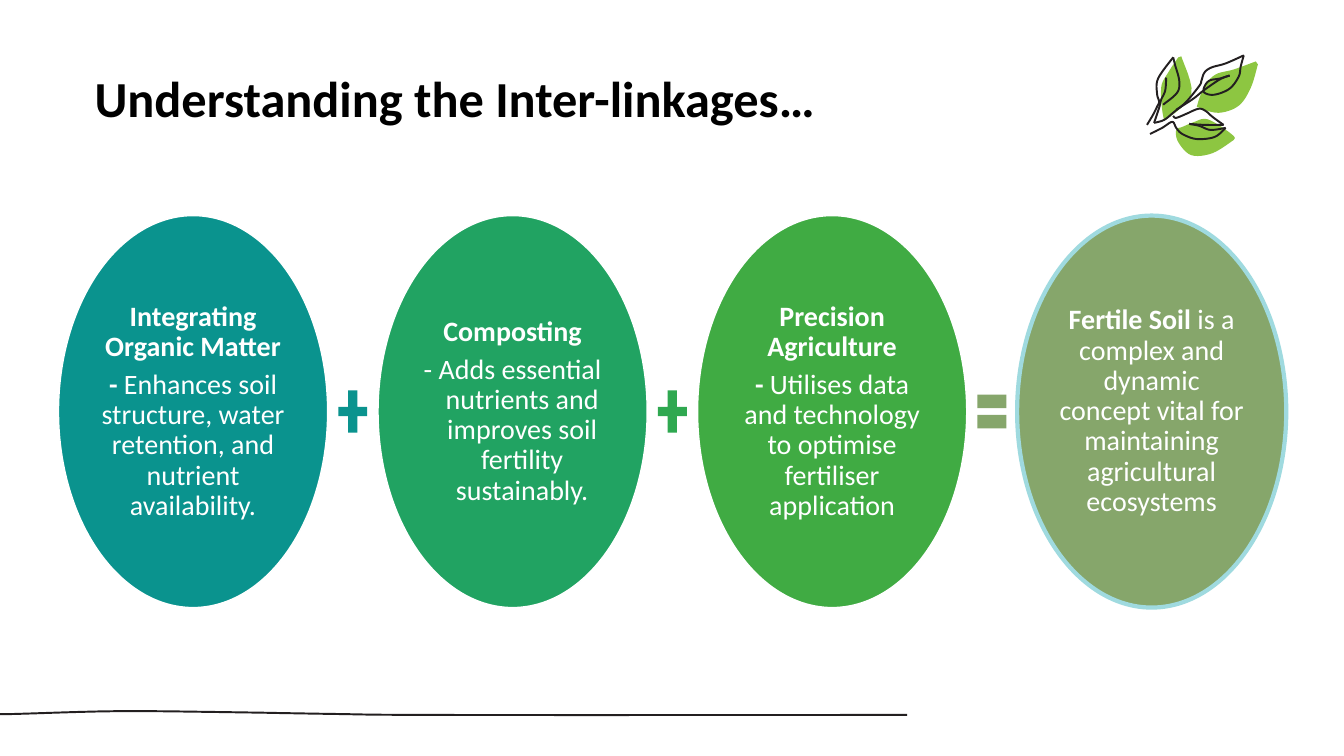
from pptx import Presentation, util as u
from pptx.dml.color import RGBColor
from pptx.enum import shapes, text

Pt = u.Pt
WHITE = RGBColor(0xFF, 0xFF, 0xFF)
BLACK = RGBColor(0, 0, 0)
INK = RGBColor(0x23, 0x1F, 0x20)
LEAF_GREEN = RGBColor(0x8D, 0xC6, 0x41)
TEAL = RGBColor(0x0A, 0x93, 0x8E)
EMERALD = RGBColor(0x21, 0xA3, 0x62)
MID_GREEN = RGBColor(0x2F, 0xA8, 0x50)
GREEN = RGBColor(0x40, 0xAB, 0x43)
OLIVE = RGBColor(0x86, 0xA6, 0x6B)
PALE_BLUE = RGBColor(0x9F, 0xDA, 0xDF)

FONT = "Calibri"
PLUS, EQUAL = shapes.MSO_SHAPE.MATH_PLUS, shapes.MSO_SHAPE.MATH_EQUAL
HANGING = Pt(13.7)

# Each paragraph is a list of (wording, bold) runs.
FACTORS = [
    (TEAL, WHITE, 1, [[("Integrating Organic Matter", True)],
                      [("- ", True), ("Enhances soil structure, water retention, "
                                      "and nutrient availability.", False)]]),
    (EMERALD, WHITE, 1, [[("Composting", True)],
                         [("- Adds essential nutrients and improves soil "
                           "fertility sustainably.", False)]]),
    (GREEN, WHITE, 1, [[("Precision Agriculture", True)],
                       [("-", True), (" Utilises data and technology to optimise "
                                      "fertiliser application", False)]]),
    (OLIVE, PALE_BLUE, 3, [[("Fertile Soil ", True),
                            ("is a complex and dynamic concept vital for "
                             "maintaining agricultural ecosystems", False)]]),
]
OPERATORS = [(PLUS, TEAL, [0.235]), (PLUS, MID_GREEN, [0.235]),
             (EQUAL, OLIVE, [0.235, 0.118])]

# Sprig points lie on a grid 100 units wide.
LEAVES = [
    [(35, 4), (45, 41), (22, 65), (17, 63), (15, 35), (22, 20), (32, 5)],
    [(111, 12), (104, 35), (92, 53), (72, 60), (53, 55), (51, 52), (58, 34),
     (69, 22), (87, 17), (109, 9)],
    [(87, 87), (87, 83), (72, 72), (59, 66), (48, 69), (36, 74), (30, 77),
     (32, 89), (45, 102), (66, 100), (87, 87)],
]
STEMS = [
    [(1, 72), (7, 62), (11, 54), (13, 49), (11, 41), (12, 26), (27, 5)],
    [(27, 5), (29, 13), (33, 28), (31, 40), (17, 52)],
    [(20, 25), (19, 38), (15, 47), (13, 55), (8, 70)],
    [(8, 70), (18, 67), (28, 59), (40, 49), (53, 33), (55, 28), (58, 20),
     (65, 15), (79, 11), (97, 3)],
    [(97, 3), (94, 14), (92, 24), (83, 36), (68, 42), (58, 40), (58, 34),
     (63, 28), (73, 26), (83, 23)],
    [(83, 23), (73, 27), (57, 38), (47, 46), (30, 57)],
    [(4, 81), (16, 75), (26, 69), (30, 75), (36, 81), (50, 86), (68, 84), (79, 75)],
    [(79, 75), (64, 77), (53, 73), (43, 71)],
    [(43, 71), (59, 72), (77, 72)],
    [(77, 72), (66, 64), (59, 58), (52, 56), (40, 61), (30, 65), (27, 63)],
]


def smooth(knots, steps=6):
    """Return points on a Catmull-Rom curve through the knots."""
    padded = [knots[0], *knots, knots[-1]]
    curve = [knots[0]]
    for a, b, c, d in zip(padded, padded[1:], padded[2:], padded[3:]):
        for step in range(1, steps + 1):
            t = step / steps
            curve.append(tuple(
                (2 * q + (r - p) * t + (2 * p - 5 * q + 4 * r - s) * t ** 2
                 + (3 * q - p - 3 * r + s) * t ** 3) / 2
                for p, q, r, s in zip(a, b, c, d)))
    return curve


def add_curve(slide, knots, left, top, unit, fill=None, line_width=1.4):
    """Draw a filled closed outline, or an open ink stroke when fill is None."""
    points = [(Pt(left + x * unit), Pt(top + y * unit)) for x, y in smooth(knots)]
    builder = slide.shapes.build_freeform(*points[0])
    builder.add_line_segments(points[1:], close=fill is not None)
    curve = builder.convert_to_shape()
    curve.shadow.inherit = False
    if fill is None:
        curve.fill.background()
        curve.line.color.rgb = INK
        curve.line.width = Pt(line_width)
    else:
        paint(curve, fill)


def paint(shape, fill):
    shape.shadow.inherit = False
    shape.fill.solid()
    shape.fill.fore_color.rgb = fill
    shape.line.fill.background()


def add_footer_rule(slide, left, top, width):
    wave = [(0, 2), (0.016, 2), (0.13, 0), (0.25, 0.7), (0.37, 2), (0.49, 2.7), (1, 2.7)]
    add_curve(slide, [(x * width, y) for x, y in wave], left, top, 1)


def add_title(slide, left, top, width, height):
    title = slide.shapes.add_textbox(Pt(left), Pt(top), Pt(width), Pt(height))
    frame = title.text_frame
    frame.word_wrap = True
    frame.auto_size = text.MSO_AUTO_SIZE.SHAPE_TO_FIT_TEXT
    frame.text = "Understanding the Inter-linkages…"
    font = frame.paragraphs[0].runs[0].font
    font.name, font.size, font.bold = FONT, Pt(36), True
    font.color.rgb = BLACK


def add_sprig(slide, left, top, width):
    unit = width / 100
    for leaf in LEAVES:
        add_curve(slide, leaf, left, top, unit, LEAF_GREEN)
    for stem in STEMS:
        add_curve(slide, stem, left, top, unit)


def add_factor(slide, left, top, width, height, factor):
    fill, outline, line_width, paragraphs = factor
    oval = slide.shapes.add_shape(shapes.MSO_SHAPE.OVAL, Pt(left), Pt(top),
                                  Pt(width), Pt(height))
    paint(oval, fill)
    oval.line.color.rgb = outline
    oval.line.width = Pt(line_width)
    frame = oval.text_frame
    frame.word_wrap = True
    frame.vertical_anchor = text.MSO_ANCHOR.MIDDLE
    frame.margin_left = frame.margin_right = Pt(1.44)
    frame.margin_top = frame.margin_bottom = Pt(1.44)
    for index, wording in enumerate(paragraphs):
        paragraph = frame.add_paragraph() if index else frame.paragraphs[0]
        paragraph.alignment = text.PP_ALIGN.CENTER
        paragraph.line_spacing = 0.9
        if index:
            paragraph.space_before = Pt(5.6)
            if len(wording) == 1:
                paragraph.level = 1
                properties = paragraph._p.get_or_add_pPr()
                properties.set("marL", str(HANGING))
                properties.set("indent", str(-HANGING))
        for words, bold in wording:
            run = paragraph.add_run()
            run.text = words
            run.font.name, run.font.size, run.font.bold = FONT, Pt(20), bold
            run.font.color.rgb = WHITE


def add_equation(slide, left, top, width, height):
    """Place equal ovals across the box with an operator in each gap."""
    gap, sign_width, sign_height = 36, 28, 41
    oval_width = (width - gap * len(OPERATORS)) / len(FACTORS)
    pitch = oval_width + gap
    for index, factor in enumerate(FACTORS):
        add_factor(slide, left + index * pitch, top, oval_width, height, factor)
    for index, (kind, colour, adjustments) in enumerate(OPERATORS):
        sign = slide.shapes.add_shape(
            kind, Pt(left + (index + 1) * pitch - (gap + sign_width) / 2),
            Pt(top + (height - sign_height) / 2), Pt(sign_width), Pt(sign_height))
        paint(sign, colour)
        for position, value in enumerate(adjustments):
            sign.adjustments[position] = value


def main():
    deck = Presentation()
    deck.slide_width, deck.slide_height = Pt(960), Pt(540)
    slide = deck.slides.add_slide(deck.slide_layouts[6])
    add_footer_rule(slide, 0, 508, 648)
    add_equation(slide, 41.8, 154, 877, 280)
    add_title(slide, 60.5, 44.6, 601, 51)
    add_sprig(slide, 818.6, 37.4, 72)
    deck.save("out.pptx")


if __name__ == "__main__":
    main()
